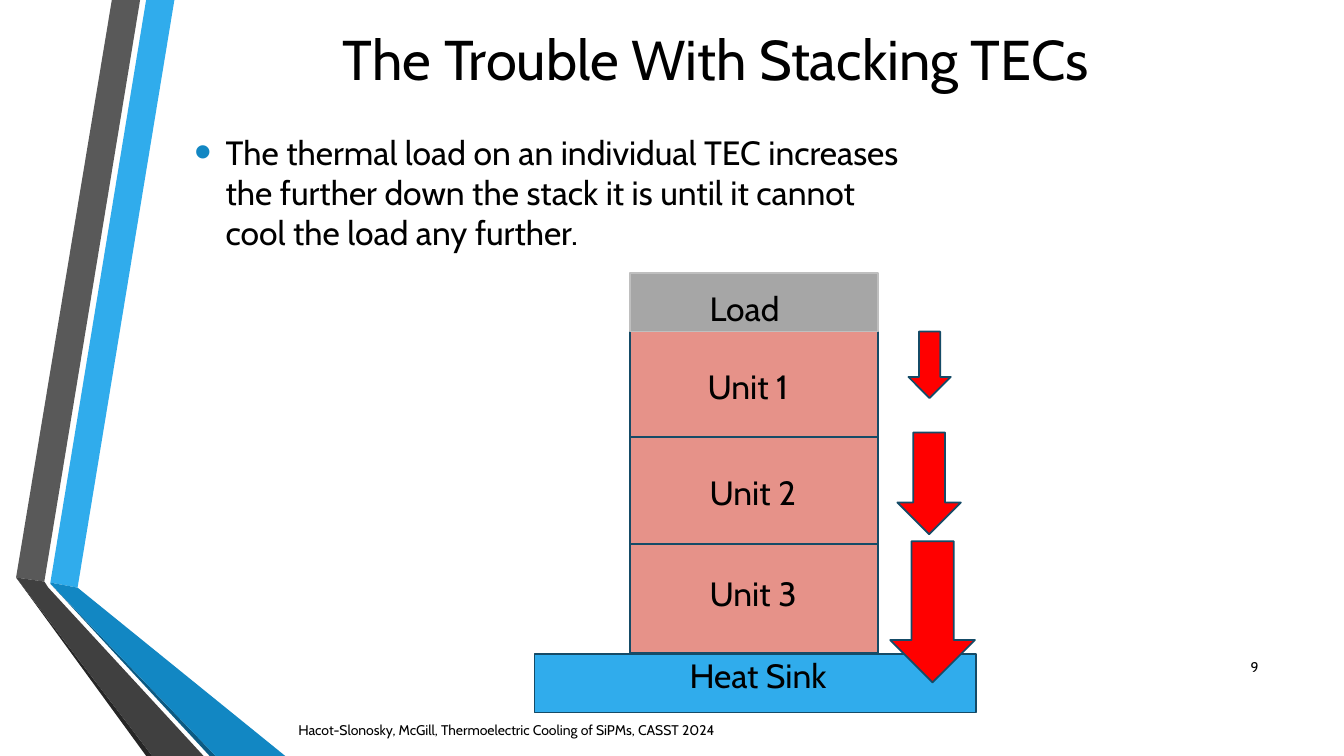
from lxml.etree import SubElement
from pptx import Presentation
from pptx.dml.color import RGBColor
from pptx.enum.shapes import MSO_SHAPE as Preset
from pptx.enum.text import MSO_ANCHOR as Anchor, PP_ALIGN as Align
from pptx.oxml.ns import qn
from pptx.util import Inches, Pt

FONT = "Cabin"
BLACK = RGBColor(0x00, 0x00, 0x00)
SKY = RGBColor(0x30, 0xAC, 0xEC)
BLUE = RGBColor(0x12, 0x87, 0xC3)
DEEP_BLUE = RGBColor(0x0C, 0x5A, 0x82)
NAVY = RGBColor(0x15, 0x4B, 0x67)
GRAY = RGBColor(0x59, 0x59, 0x59)
DARK_GRAY = RGBColor(0x40, 0x40, 0x40)
CHARCOAL = RGBColor(0x26, 0x26, 0x26)
LOAD_GRAY = RGBColor(0xA6, 0xA6, 0xA6)
LOAD_EDGE = RGBColor(0xBF, 0xBF, 0xBF)
SALMON = RGBColor(0xE6, 0x92, 0x89)
RED = RGBColor(0xFF, 0x00, 0x00)

RIBBONS = [
    (SKY, [(0.5, 5.78), (0.77, 5.83), (1.73, 0), (1.45, 0)]),
    (GRAY, [(1.39, 0), (1.11, 0), (0.16, 5.73), (0.44, 5.77)]),
    (CHARCOAL, [(0.16, 5.73), (1.45, 7.5), (1.51, 7.5)]),
    (DEEP_BLUE, [(0.5, 5.79), (2.08, 7.5), (2.14, 7.5)]),
    (BLUE, [(0.5, 5.79), (2.14, 7.5), (2.83, 7.5), (0.77, 5.83), (0.5, 5.78)]),
    (DARK_GRAY, [(2.02, 7.5), (0.48, 5.83), (0.44, 5.77), (0.16, 5.73), (1.51, 7.5)]),
]
STACK_LEFT, STACK_WIDTH = 6.25, 2.46
UNIT_TOP, UNIT_PITCH, UNIT_HEIGHT = 3.27, 1.065, 1.08
STACK_LABELS = [
    ("Load", 6.94, 2.81),
    ("Unit 1", 6.92, 3.58),
    ("Unit 2", 6.94, 4.63),
    ("Unit 3", 6.94, 5.63),
    ("Heat Sink", 6.74, 6.45),
]
HEAT_ARROWS = [
    (9.01, 3.29, 0.42, 0.66),
    (8.9, 4.29, 0.63, 1.01),
    (8.83, 5.37, 0.84, 1.4),
]


def add_ribbon(slide, color, points):
    corners = [(Inches(x), Inches(y)) for x, y in points]
    builder = slide.shapes.build_freeform(*corners[0], scale=1)
    builder.add_line_segments(corners[1:], close=True)
    ribbon = builder.convert_to_shape()
    ribbon.shadow.inherit = False
    ribbon.fill.solid()
    ribbon.fill.fore_color.rgb = color
    ribbon.line.fill.background()


def add_block(slide, preset, left, top, width, height, fill, edge=NAVY):
    block = slide.shapes.add_shape(
        preset, Inches(left), Inches(top), Inches(width), Inches(height))
    block.shadow.inherit = False
    block.fill.solid()
    block.fill.fore_color.rgb = fill
    block.line.color.rgb = edge
    block.line.width = Pt(1.25)


def add_text(slide, text, left, top, width, height, size,
             align=Align.LEFT, anchor=Anchor.MIDDLE):
    """Add a one-paragraph text box and return the paragraph."""
    box = slide.shapes.add_textbox(
        Inches(left), Inches(top), Inches(width), Inches(height))
    frame = box.text_frame
    frame.word_wrap = True
    frame.vertical_anchor = anchor
    para = frame.paragraphs[0]
    para.text = text
    para.alignment = align
    font = para.runs[0].font
    font.name = FONT
    font.size = Pt(size)
    font.color.rgb = BLACK
    return para


def add_bullet(para, color):
    """Give the paragraph a hanging, enlarged round bullet."""
    para.space_before = Pt(4.8)
    para.space_after = Pt(6)
    properties = para._p.get_or_add_pPr()
    indent = Inches(0.31)
    properties.set("marL", str(indent))
    properties.set("indent", str(-indent))
    bullet_color = SubElement(properties, qn("a:buClr"))
    SubElement(bullet_color, qn("a:srgbClr"), val=str(color))
    SubElement(properties, qn("a:buSzPct"), val="145000")
    SubElement(properties, qn("a:buFont"), typeface="Arial")
    SubElement(properties, qn("a:buChar"), char="•")


def add_stack(slide):
    for index in range(3):
        add_block(slide, Preset.RECTANGLE, STACK_LEFT, UNIT_TOP + index * UNIT_PITCH,
                  STACK_WIDTH, UNIT_HEIGHT, SALMON)
    add_block(slide, Preset.RECTANGLE, STACK_LEFT, 2.71, STACK_WIDTH, 0.58,
              LOAD_GRAY, LOAD_EDGE)
    for label, left, top in STACK_LABELS:
        add_text(slide, label, left, top, 2.15, 0.5, 24, anchor=Anchor.TOP)
    for arrow in HEAT_ARROWS:
        add_block(slide, Preset.DOWN_ARROW, *arrow, RED)


def main():
    deck = Presentation()
    deck.slide_width = Inches(13.33)
    deck.slide_height = Inches(7.5)
    slide = deck.slides.add_slide(deck.slide_layouts[6])

    for color, points in RIBBONS:
        add_ribbon(slide, color, points)
    add_block(slide, Preset.RECTANGLE, 5.3, 6.49, 4.38, 0.58, SKY)
    add_text(slide, "The Trouble With Stacking TECs",
             1.62, -0.38, 10.96, 1.92, 40, Align.CENTER)
    statement = add_text(
        slide,
        "The thermal load on an individual TEC increases the further down "
        "the stack it is until it cannot cool the load any further.",
        1.83, -0.2, 7.39, 4.21, 24)
    add_bullet(statement, BLUE)
    add_stack(slide)
    add_text(slide, "9", 11.98, 6.42, 0.6, 0.4, 10, Align.RIGHT)
    add_text(slide, "Hacot-Slonosky, McGill, Thermoelectric Cooling of SiPMs, CASST 2024",
             2.86, 7.04, 7.75, 0.4, 10)
    deck.save("out.pptx")


if __name__ == "__main__":
    main()
